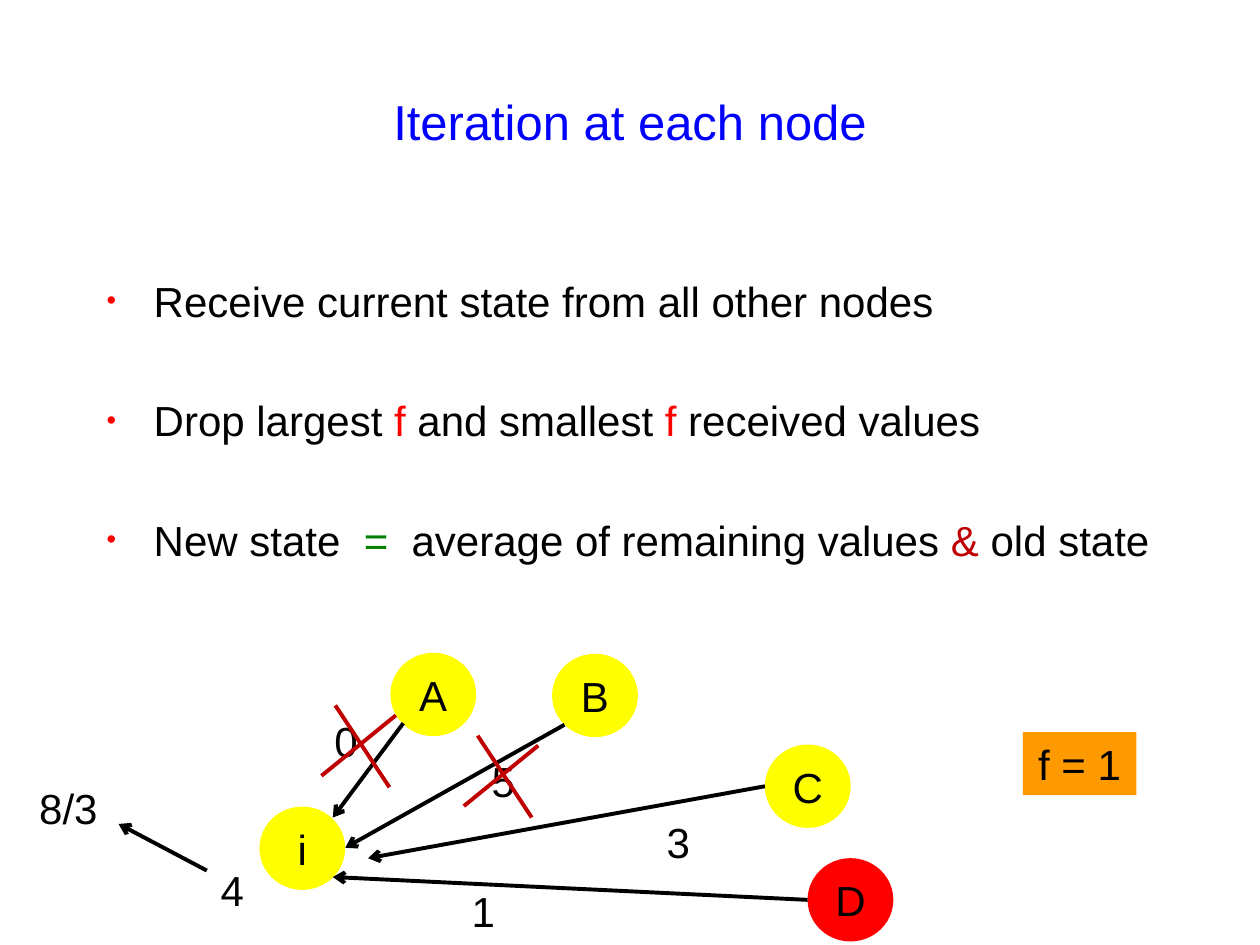
from lxml import etree
from pptx import Presentation
from pptx.dml.color import RGBColor
from pptx.enum.shapes import MSO_CONNECTOR, MSO_SHAPE
from pptx.enum.text import MSO_ANCHOR, PP_ALIGN
from pptx.oxml.ns import qn
from pptx.util import Cm, Pt

BLACK, RED, DARK_RED = "000000", "FF0000", "C00000"
BLUE, GREEN, YELLOW, ORANGE = "0000FF", "008000", "FFFF00", "FF9900"

NODE_SIZE = (1.73, 1.68)
NODES = [("i", 4.7, 3.1, YELLOW), ("A", 7.34, 0, YELLOW), ("D", 15.75, 4.14, RED),
         ("C", 14.89, 1.85, YELLOW), ("B", 10.6, 0.02, YELLOW)]
MESSAGES = [((7.6, 1.42), (6.18, 3.32)), ((10.85, 1.45), (6.43, 3.93)),
            ((14.89, 2.69), (6.89, 4.14)), ((15.75, 4.98), (6.18, 4.52)),
            ((3.64, 4.39), (1.86, 3.45))]
VALUES = [("4", 3.66, 4.14, 0.99), ("1", 8.72, 4.57, 0.99), ("3", 12.65, 3.17, 0.99),
          ("5", 9.12, 1.95, 0.99), ("0", 5.95, 1.14, 0.99), ("8/3", 0, 2.49, 1.7)]
CROSSES = [(8.82, 1.67), (5.95, 1.06)]
CROSS_STROKES = [((0.28, 0), (1.37, 1.65)), ((1.5, 0.2), (0, 1.42))]

STEPS = [
    [("Receive current state from all other nodes", BLACK)],
    [("Drop largest ", BLACK), ("f", RED), (" and smallest ", BLACK),
     ("f ", RED), ("received values", BLACK)],
    [("New state  ", BLACK), ("=", GREEN), ("  average of remaining values ", BLACK),
     ("& ", DARK_RED), ("old state", BLACK)],
]


def rgb(value):
    return RGBColor.from_string(value)


def add_runs(paragraph, runs, size=24):
    for text, color in runs:
        run = paragraph.add_run()
        run.text = text
        for name, value in {"name": "Arial", "size": Pt(size)}.items():
            setattr(run.font, name, value)
        run.font.color.rgb = rgb(color)


def format_frame(frame, **values):
    for name, value in values.items():
        setattr(frame, name, value)


def add_label(slide, text, left, top, width, height, color=BLACK, size=24, **frame_format):
    label = slide.shapes.add_textbox(Cm(left), Cm(top), Cm(width), Cm(height))
    format_frame(label.text_frame, **frame_format)
    paragraph = label.text_frame.paragraphs[0]
    paragraph.alignment = PP_ALIGN.CENTER
    add_runs(paragraph, [(text, color)], size)


def add_filled(slide, kind, text, left, top, width, height, fill, **frame_format):
    shape = slide.shapes.add_shape(kind, Cm(left), Cm(top), Cm(width), Cm(height))
    shape.shadow.inherit = False
    shape.fill.solid()
    shape.fill.fore_color.rgb = rgb(fill)
    shape.line.fill.background()
    format_frame(shape.text_frame, **frame_format)
    paragraph = shape.text_frame.paragraphs[0]
    paragraph.alignment = PP_ALIGN.CENTER
    add_runs(paragraph, [(text, BLACK)])


def add_line(slide, left, top, start, end, color, arrow=False):
    points = [Cm(left + start[0]), Cm(top + start[1]), Cm(left + end[0]), Cm(top + end[1])]
    connector = slide.shapes.add_connector(MSO_CONNECTOR.STRAIGHT, *points)
    connector.line.color.rgb = rgb(color)
    connector.line.width = Pt(2.25)
    if arrow:
        etree.SubElement(connector.line._get_or_add_ln(), qn("a:tailEnd"), type="arrow")
    etree.SubElement(connector._element.spPr, qn("a:effectLst"))


def add_bullet(paragraph):
    properties = paragraph._p.get_or_add_pPr()
    properties.set("marL", str(Cm(0.95)))
    properties.set("indent", str(-Cm(0.95)))
    color = etree.SubElement(properties, qn("a:buClr"))
    etree.SubElement(color, qn("a:srgbClr"), val=RED)
    etree.SubElement(properties, qn("a:buSzPct"), val="65000")
    etree.SubElement(properties, qn("a:buFont"), typeface="Arial")
    etree.SubElement(properties, qn("a:buChar"), char="•")


def add_steps(slide, left, top, width, height):
    body = slide.shapes.add_textbox(Cm(left), Cm(top), Cm(width), Cm(height))
    frame = body.text_frame
    format_frame(frame, word_wrap=True, margin_top=Cm(1.31))
    for index, runs in enumerate(STEPS):
        paragraph = frame.add_paragraph() if index else frame.paragraphs[0]
        if index:
            paragraph.space_before = Pt(39.5)
        add_bullet(paragraph)
        add_runs(paragraph, runs)


def add_network(slide, left, top):
    # Nodes
    for name, x, y, fill in NODES:
        add_filled(slide, MSO_SHAPE.OVAL, name, left + x, top + y, *NODE_SIZE, fill,
                   vertical_anchor=MSO_ANCHOR.MIDDLE, margin_left=0, margin_right=0)
    # Messages and the values they carry
    for start, end in MESSAGES:
        add_line(slide, left, top, start, end, BLACK, arrow=True)
    for value, x, y, width in VALUES:
        add_label(slide, value, left + x, top + y, width, 1.27, word_wrap=False)
    # Crosses over the dropped values
    for x, y in CROSSES:
        for start, end in CROSS_STROKES:
            add_line(slide, left + x, top + y, start, end, DARK_RED)


def main():
    presentation = Presentation()
    presentation.slide_width, presentation.slide_height = Cm(25.4), Cm(19.05)
    slide = presentation.slides.add_slide(presentation.slide_layouts[6])
    add_label(slide, "Iteration at each node", 1.9, 0.84, 21.6, 3.18, BLUE, 28,
              word_wrap=True, vertical_anchor=MSO_ANCHOR.MIDDLE)
    add_steps(slide, 1.9, 4.24, 22, 12.7)
    add_network(slide, 0.53, 13.16)
    # Fault bound
    add_filled(slide, MSO_SHAPE.RECTANGLE, "f = 1", 20.62, 14.76, 2.29, 1.27, ORANGE,
               word_wrap=False, vertical_anchor=MSO_ANCHOR.TOP)
    presentation.save("out.pptx")


if __name__ == "__main__":
    main()
